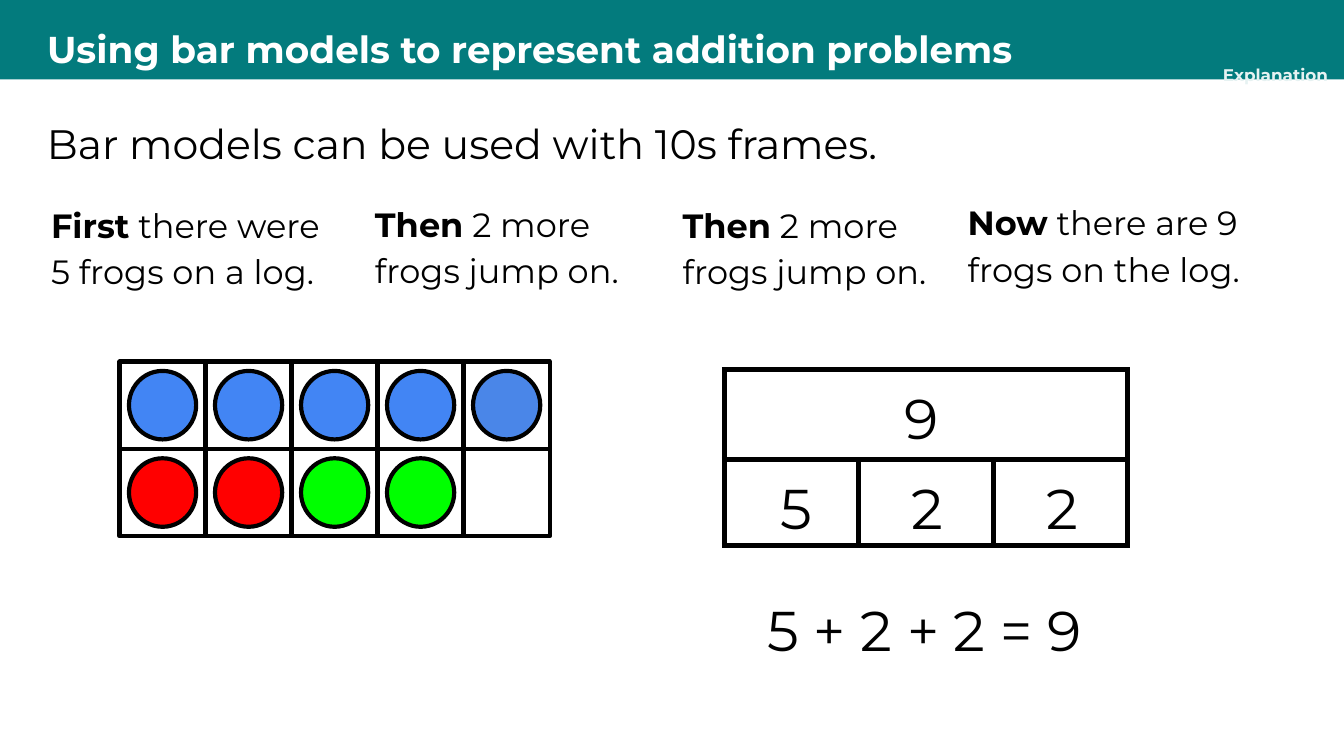
from dataclasses import dataclass

from lxml.etree import SubElement
from pptx import Presentation
from pptx.dml.color import RGBColor as RGB
from pptx.enum.shapes import MSO_SHAPE as Form
from pptx.enum.text import MSO_ANCHOR as Anchor, PP_ALIGN as Align
from pptx.oxml.ns import qn
from pptx.slide import Slide
from pptx.util import Inches, Pt


@dataclass(frozen=True)
class Theme:
    font: str = "Montserrat"
    teal: str = "037B7D"
    pale: str = "E6F2F2"
    white: str = "FFFFFF"
    black: str = "000000"
    blue: str = "4285F4"
    steel: str = "4A86E8"
    red: str = "FF0000"
    green: str = "00FF00"
    tag: float = 9
    title: float = 20
    lead: float = 22
    story: float = 18
    sum: float = 30
    edge: float = 2.25
    bar: float = 3


T = Theme()


@dataclass(frozen=True)
class Box:
    x: float
    y: float
    w: float
    h: float

    def emu(self) -> list[Inches]:
        return [Inches(v) for v in (self.x, self.y, self.w, self.h)]


@dataclass(frozen=True)
class Note:
    """Text in a box; the opening word can be bold on its own."""
    box: Box
    text: str
    size: float
    color: str = T.black
    bold: bool = False
    head: str = ""
    space: float = 1.15
    after: float = 10
    inset: float = 0
    align: Align = Align.LEFT
    anchor: Anchor = Anchor.TOP


WIDE = 10
HIGH = WIDE * 9 / 16
BAR = Box(5.39, 2.75, 3, 1.31)
ROWS = (0.67, 0.64)
CELL = Box(0.89, 2.69, 0.64, 0.65)
DOT = Box(0.07, 0.07, 0.5, 0.51)
FRAME = (
    (T.blue, T.blue, T.blue, T.blue, T.steel),
    (T.red, T.red, T.green, T.green, None),
)


def story(x: float, y: float, w: float, head: str, text: str) -> Note:
    return Note(Box(x, y, w, 0.76), text, T.story, head=head)


def digit(x: float, y: float, text: str) -> Note:
    return Note(Box(x, y, 0.52, 0.68), text, T.sum,
                space=1, after=0, inset=0.1)


NOTES = (
    Note(Box(8.98, 0.48, 1.02, 0.15), "Explanation", T.tag, T.pale, True,
         space=1, after=0, align=Align.CENTER),
    Note(Box(0.35, 0, 8.62, 0.67),
         "Using bar models to represent addition problems",
         T.title, T.white, True, after=0, anchor=Anchor.MIDDLE),
    Note(Box(0.35, 0.83, 6.7, 0.47),
         "Bar models can be used with 10s frames.", T.lead),
    story(0.38, 1.48, 2.1, "First", " there were 5 frogs on a log."),
    story(2.79, 1.47, 2.18, "Then", " 2 more frogs jump on."),
    story(5.08, 1.48, 1.9, "Then", " 2 more frogs jump on."),
    story(7.2, 1.46, 2.42, "Now", " there are 9 frogs on the log."),
    Note(Box(5.71, 4.36, 3.59, 0.49), "5 + 2 + 2 = 9", T.sum),
)
DIGITS = (
    digit(6.63, BAR.y, "9"),
    digit(5.71, BAR.y + ROWS[0], "5"),
    digit(6.68, BAR.y + ROWS[0], "2"),
    digit(7.69, BAR.y + ROWS[0], "2"),
)


def write(slide: Slide, note: Note) -> None:
    frame = slide.shapes.add_textbox(*note.box.emu()).text_frame
    frame.word_wrap = True
    frame.vertical_anchor = note.anchor
    frame.margin_left = frame.margin_right = Inches(note.inset)
    frame.margin_top = frame.margin_bottom = Inches(note.inset)
    para = frame.paragraphs[0]
    para.alignment = note.align
    para.line_spacing = note.space
    para.space_after = Pt(note.after)
    font = para.font
    font.name, font.size, font.bold = T.font, Pt(note.size), note.bold
    font.color.rgb = RGB.from_string(note.color)
    if note.head:
        run = para.add_run()
        run.text = note.head
        run.font.bold = True
    para.add_run().text = note.text


def draw(slide: Slide, form: Form, box: Box, fill: str | None = None,
         edge: bool = True) -> None:
    shape = slide.shapes.add_shape(form, *box.emu())
    shape.shadow.inherit = False
    if fill:
        shape.fill.solid()
        shape.fill.fore_color.rgb = RGB.from_string(fill)
    else:
        shape.fill.background()
    if edge:
        shape.line.color.rgb = RGB.from_string(T.black)
        shape.line.width = Pt(T.edge)
    else:
        shape.line.fill.background()


def tens(slide: Slide) -> None:
    """Draw the 10s frame with its counters."""
    for r, row in enumerate(FRAME):
        for c, color in enumerate(row):
            x, y = CELL.x + c * CELL.w, CELL.y + r * CELL.h
            draw(slide, Form.RECTANGLE, Box(x, y, CELL.w, CELL.h))
            if color:
                dot = Box(x + DOT.x, y + DOT.y, DOT.w, DOT.h)
                draw(slide, Form.OVAL, dot, color)


def model(slide: Slide) -> None:
    """Draw the bar model: one whole above three parts."""
    table = slide.shapes.add_table(2, 3, *BAR.emu()).table
    table.first_row = table.horz_banding = False
    for col in table.columns:
        col.width = Inches(BAR.w / 3)
    for row, high in zip(table.rows, ROWS):
        row.height = Inches(high)
    table.cell(0, 0).merge(table.cell(0, 2))
    for cell in table.iter_cells():
        props = cell._tc.get_or_add_tcPr()
        for side in ("lnL", "lnR", "lnT", "lnB"):
            line = SubElement(props, qn(f"a:{side}"), w=str(Pt(T.bar)))
            fill = SubElement(line, qn("a:solidFill"))
            SubElement(fill, qn("a:srgbClr"), val=T.black)
        cell.fill.background()


def main() -> None:
    deck = Presentation()
    deck.slide_width, deck.slide_height = Inches(WIDE), Inches(HIGH)
    slide = deck.slides.add_slide(deck.slide_layouts[6])
    draw(slide, Form.RECTANGLE, Box(0, 0, WIDE, 0.59), T.teal, edge=False)
    for note in NOTES:
        write(slide, note)
    model(slide)
    tens(slide)
    for note in DIGITS:
        write(slide, note)
    deck.save("out.pptx")


if __name__ == "__main__":
    main()
